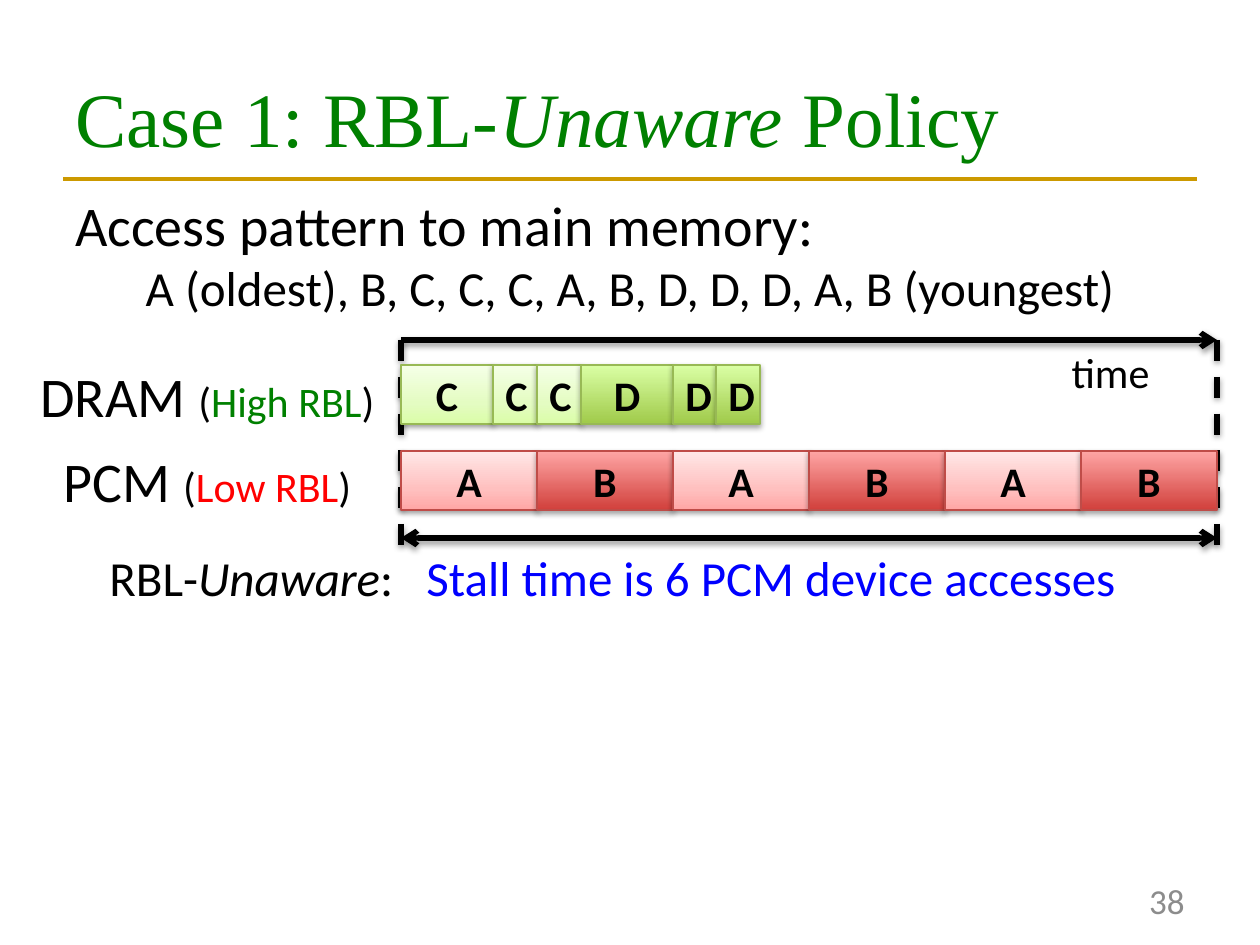
from itertools import accumulate

from lxml import etree
from pptx import Presentation
from pptx import util as u
from pptx.dml.color import RGBColor
from pptx.enum import dml, shapes, text
from pptx.oxml import parse_xml
from pptx.oxml.ns import nsdecls, qn

PX = 914400 / 126
BLACK, GREEN, RED, BLUE = "000000", "008000", "FF0000", "0000FF"
LEFT, RIGHT = 401, 1217

# Gradient stops run from bottom to top; then outline, shadow opacity and distance.
LIGHT_SHADOW, DARK_SHADOW = (38, 20000), (35, 23000)
REQUEST_STYLES = {
    "A": ([(0, "FFA6A5"), (35, "FFC0BF"), (100, "FFE7E7")], "BF4C48", LIGHT_SHADOW),
    "B": ([(0, "D1403C"), (100, "FFA6A5")], "BF4C48", DARK_SHADOW),
    "C": ([(0, "DAFDA7"), (35, "E4FCC2"), (100, "F5FFE7")], "98B955", LIGHT_SHADOW),
    "D": ([(0, "A0CA4A"), (100, "DAFFA5")], "98B955", DARK_SHADOW),
}


def px(length):
    return u.Emu(round(length * PX))


def color(value):
    return RGBColor.from_string(value)


def set_shadow(shape, opacity=None, distance=0):
    """Give the shape a soft drop shadow, or none without an opacity."""
    shadow = "" if opacity is None else (
        f'<a:outerShdw blurRad="40000" dist="{distance}" dir="5400000" rotWithShape="0">'
        f'<a:srgbClr val="{BLACK}"><a:alpha val="{opacity * 1000}"/></a:srgbClr>'
        "</a:outerShdw>")
    shape._element.spPr.append(
        parse_xml(f'<a:effectLst {nsdecls("a")}>{shadow}</a:effectLst>'))


class SlideBuilder:
    def __init__(self, slide, font="Calibri"):
        self.slide = slide
        self.font = font

    def add_runs(self, paragraph, runs, align=text.PP_ALIGN.LEFT, **defaults):
        """Add runs given as (words, format) pairs on top of the default format."""
        paragraph.alignment = align
        for words, changes in runs:
            run = paragraph.add_run()
            run.text = words
            values = {"name": self.font, "color": BLACK, **defaults, **changes}
            run.font.color.rgb = color(values.pop("color"))
            values["size"] = u.Pt(values["size"])
            for name, value in values.items():
                setattr(run.font, name, value)

    def title(self, box, runs):
        title = self.slide.shapes.title
        title.left, title.top, title.width, title.height = map(px, box)
        frame = title.text_frame
        frame.auto_size = text.MSO_AUTO_SIZE.NONE
        frame.vertical_anchor = text.MSO_ANCHOR.MIDDLE
        self.add_runs(frame.paragraphs[0], runs, name="Times New Roman",
                      size=44, color=GREEN)

    def textbox(self, box, runs, wrap=True, anchor=text.MSO_ANCHOR.TOP, **style):
        frame = self.slide.shapes.add_textbox(*map(px, box)).text_frame
        frame.word_wrap = wrap
        frame.vertical_anchor = anchor
        self.add_runs(frame.paragraphs[0], runs, **style)
        return frame

    def line(self, start, end, line_color=BLACK, width=3, dash=None,
             arrows=(), shadow=LIGHT_SHADOW):
        connector = self.slide.shapes.add_connector(
            shapes.MSO_CONNECTOR.STRAIGHT, *map(px, start + end))
        connector.line.color.rgb = color(line_color)
        connector.line.width = u.Pt(width)
        if dash:
            connector.line.dash_style = dash
        for arrow in arrows:
            etree.SubElement(connector.line._get_or_add_ln(), qn(f"a:{arrow}"),
                             type="arrow")
        set_shadow(connector, *shadow)

    def request(self, label, left, top, width, height=59):
        stops, outline, shadow = REQUEST_STYLES[label]
        shape = self.slide.shapes.add_shape(
            shapes.MSO_SHAPE.RECTANGLE, *map(px, (left, top, width, height)))
        stop_xml = "".join(
            f'<a:gs pos="{position * 1000}"><a:srgbClr val="{value}"/></a:gs>'
            for position, value in stops)
        shape._element.spPr.append(parse_xml(
            f'<a:gradFill rotWithShape="1" {nsdecls("a")}><a:gsLst>{stop_xml}</a:gsLst>'
            '<a:lin ang="16200000" scaled="0"/></a:gradFill>'))
        shape.line.color.rgb = color(outline)
        shape.line.width = u.Pt(0.75)
        set_shadow(shape, *shadow)
        shape.text_frame.vertical_anchor = text.MSO_ANCHOR.MIDDLE
        self.add_runs(shape.text_frame.paragraphs[0], [(label, {})],
                      text.PP_ALIGN.CENTER, size=24, bold=True)

    def request_row(self, labels, widths, top):
        """Place requests end to end from the start of the timeline."""
        lefts = accumulate(widths[:-1], initial=LEFT)
        for label, left, width in zip(labels, lefts, widths):
            self.request(label, left, top, width)


def main():
    presentation = Presentation()
    presentation.slide_width, presentation.slide_height = px(1260), px(945)
    slide = presentation.slides.add_slide(presentation.slide_layouts[5])
    builder = SlideBuilder(slide)
    center = text.PP_ALIGN.CENTER

    builder.line((63, 179), (1197, 179), "CC9900", 2.25, shadow=())
    builder.title((63, 38, 1134, 157), [
        ("Case 1: RBL-", {}), ("Unaware ", {"italic": True}), ("Policy", {})])

    pattern = builder.textbox((63, 184, 1134, 144),
                              [("Access pattern to main memory:", {})], size=32)
    builder.add_runs(pattern.add_paragraph(), [
        ("A (oldest), B, C, C, C, A, B, D, D, D, A, B (youngest)", {})],
        center, size=28)

    for x in (RIGHT, LEFT):
        builder.line((x, 340), (x, 556), dash=dml.MSO_LINE.DASH)

    for top, memory, locality, tint in ((355, "DRAM ", "High RBL", GREEN),
                                        (440, "PCM ", "Low RBL", RED)):
        builder.textbox((25, top, 365, 81), [
            (memory, {"size": 32}), ("(", {}), (locality, {"color": tint}), (")", {})],
            align=center, size=24)

    builder.request_row("ABABAB", [136] * 6, top=451)
    builder.request_row("CCCDDD", [92, 44, 44, 92, 43, 44], top=365)

    builder.line((LEFT, 538), (RIGHT, 538), arrows=("headEnd", "tailEnd"))
    builder.line((LEFT, 340), (RIGHT, 340), arrows=("tailEnd",))
    builder.textbox((1058, 340, 105, 63), [("time", {})], wrap=False,
                    align=center, size=24)

    stall = builder.textbox((97, 541, 1052, 72), [
        ("RBL-", {}), ("Unaware", {"italic": True}), (":\t", {}),
        ("Stall time is 6 PCM device accesses", {"color": BLUE})], size=28)
    tabs = etree.SubElement(stall.paragraphs[0]._p.get_or_add_pPr(), qn("a:tabLst"))
    etree.SubElement(tabs, qn("a:tab"), pos=str(px(317)), algn="l")

    builder.textbox((903, 876, 294, 50), [("38", {})], align=text.PP_ALIGN.RIGHT,
                    anchor=text.MSO_ANCHOR.MIDDLE, size=20, color="8C8C8C")

    presentation.save("out.pptx")


if __name__ == "__main__":
    main()
